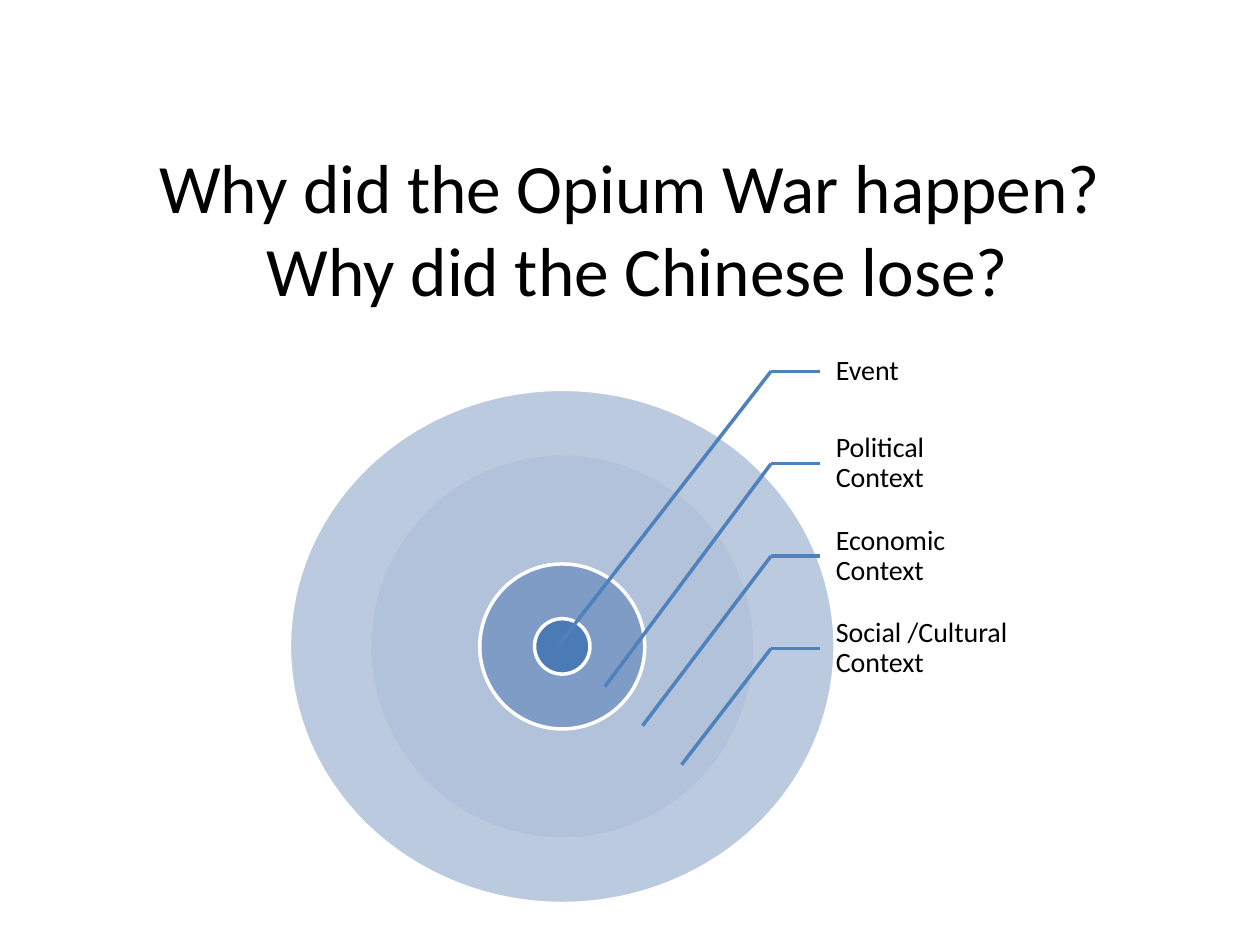
from lxml import etree
from pptx import Presentation
from pptx.dml.color import RGBColor
from pptx.enum import shapes, text
from pptx.oxml import ns
from pptx.util import Pt

# Content
TITLE = "Why did the Opium War happen?\v Why did the Chinese lose?"
# Rings from back to front: width, height, colour, opacity in percent
RINGS = [
    (220.3, 220.3, "C2CDE1", 50),
    (311.8, 293.8, "9CB1D1", 67),
    (94.3, 94.3, "7495C2", 83),
    (31.7, 31.7, "4B7BB5", 100),
]
# Labels from top to bottom, with the point inside the rings each one marks
LABELS = [
    ("Event", (319.7, 367.9)),
    ("Political Context", (345.6, 392.4)),
    ("Economic Context", (367.2, 414.7)),
    ("Social /Cultural Context", (389.5, 437)),
]

# Layout in points
CENTER_X, CENTER_Y = 321.3, 369.4
LABEL_LEFT, LABEL_TOP, LABEL_WIDTH, LABEL_HEIGHT = 468.7, 185.8, 110.2, 52.8
ELBOW_X = 440.6
LINE_WIDTH = 2
LABEL_FRAME = dict(
    word_wrap=True, vertical_anchor=text.MSO_ANCHOR.MIDDLE,
    margin_left=Pt(8.96), margin_right=Pt(1.6),
    margin_top=Pt(1.6), margin_bottom=Pt(1.6),
)
TITLE_FRAME = dict(
    word_wrap=True, vertical_anchor=text.MSO_ANCHOR.MIDDLE,
    auto_size=text.MSO_AUTO_SIZE.NONE,
)


def color(hex_code):
    return RGBColor.from_string(hex_code)


def write(frame, words, size, frame_format, paragraph_format):
    for name, value in frame_format.items():
        setattr(frame, name, value)
    frame.text = words
    paragraph = frame.paragraphs[0]
    for name, value in paragraph_format.items():
        setattr(paragraph, name, value)
    for run in paragraph.runs:
        run.font.name, run.font.size = "Calibri", Pt(size)
        run.font.color.rgb = color("000000")


def add_ring(slide, width, height, fill, opacity):
    ring = slide.shapes.add_shape(
        shapes.MSO_SHAPE.OVAL, Pt(CENTER_X - width / 2),
        Pt(CENTER_Y - height / 2), Pt(width), Pt(height))
    ring.shadow.inherit = False
    ring.fill.solid()
    ring.fill.fore_color.rgb = color(fill)
    ring.line.color.rgb = color("FFFFFF")
    ring.line.width = Pt(LINE_WIDTH)
    if opacity < 100:
        fill_color = ring.fill._xPr.find(ns.qn("a:solidFill"))[0]
        etree.SubElement(fill_color, ns.qn("a:alpha"), val=str(opacity * 1000))


def add_leader(slide, start, end):
    leader = slide.shapes.add_connector(
        shapes.MSO_CONNECTOR.STRAIGHT, *map(Pt, start + end))
    leader.line.color.rgb = color("4F81BD")
    leader.line.width = Pt(LINE_WIDTH)
    etree.SubElement(leader._element.spPr, ns.qn("a:effectLst"))
    return leader


def main():
    deck = Presentation()
    deck.slide_width, deck.slide_height = Pt(720), Pt(540)
    slide = deck.slides.add_slide(deck.slide_layouts[5])

    # Title
    title = slide.shapes.title
    title.left, title.top, title.width, title.height = map(Pt, (54, 72, 612, 116))
    write(title.text_frame, TITLE, 39.6, TITLE_FRAME,
          dict(alignment=text.PP_ALIGN.CENTER))

    # Concentric rings
    for ring in RINGS:
        add_ring(slide, *ring)

    # Labels with bent leaders
    for row, (words, target) in enumerate(LABELS):
        top = LABEL_TOP + row * LABEL_HEIGHT
        middle = top + LABEL_HEIGHT / 2
        label = slide.shapes.add_textbox(
            *map(Pt, (LABEL_LEFT, top, LABEL_WIDTH, LABEL_HEIGHT)))
        write(label.text_frame, words, 16, LABEL_FRAME, dict(line_spacing=0.9))
        elbow = (ELBOW_X, middle)
        add_leader(slide, elbow, (LABEL_LEFT, middle)).end_connect(label, 1)
        add_leader(slide, elbow, target)

    deck.save("out.pptx")


if __name__ == "__main__":
    main()
